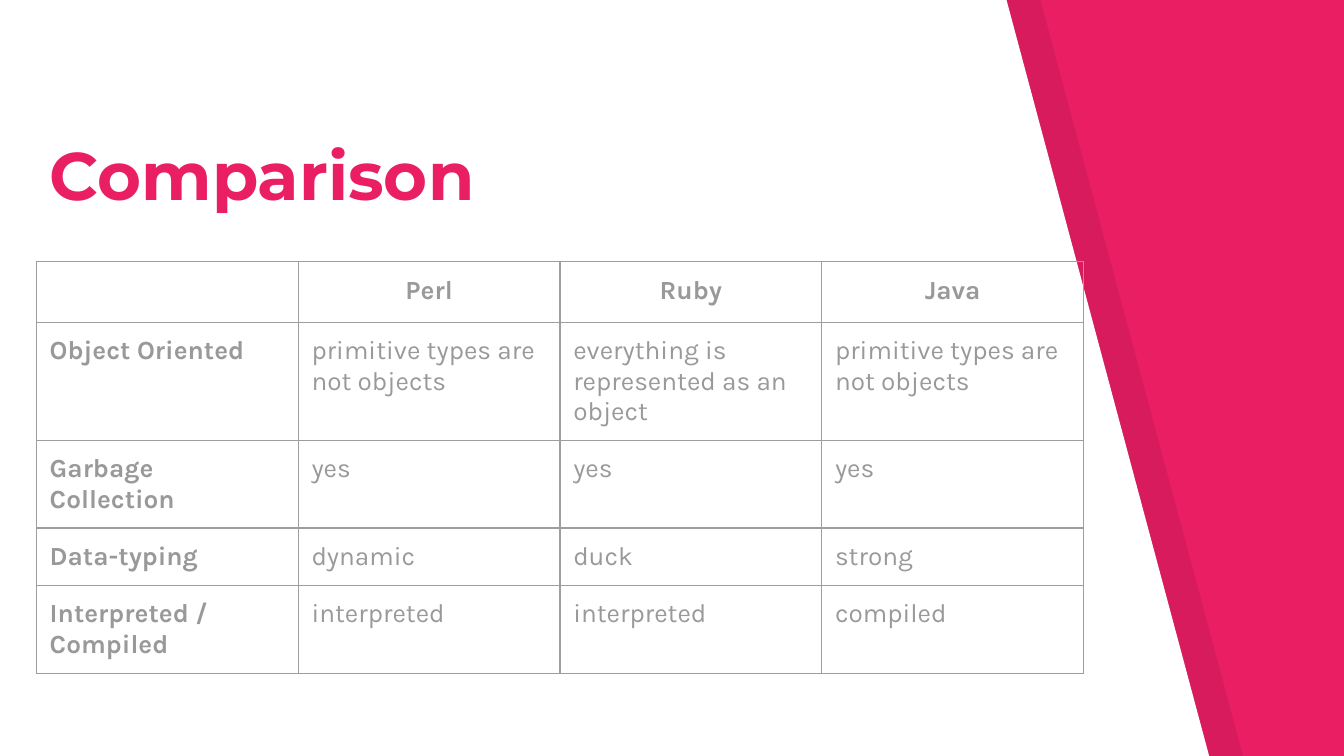
import pptx
import pptx.dml.color
import pptx.enum.text
import pptx.oxml
import pptx.oxml.ns
import pptx.util
from dataclasses import dataclass
from pptx.util import Cm


@dataclass(frozen=True)
class Theme:
    pink: str = "E91E63"
    white: str = "FFFFFF"
    shade: str = "000000"
    shade_opacity: int = 7
    text: str = "999999"
    border: str = "9E9E9E"
    border_width: float = 0.75
    title_font: str = "Montserrat"
    body_font: str = "Karla"
    title_size: int = 36
    body_size: int = 14


theme = Theme()
rgb = pptx.dml.color.RGBColor.from_string
inset = Cm(0.25)


def add_styled_run(paragraph, text, font_name, size, color, bold):
    run = paragraph.add_run()
    run.text = text
    run.font.name = font_name
    run.font.size = pptx.util.Pt(size)
    run.font.bold = bold
    run.font.color.rgb = rgb(color)


def add_cell_borders(cell):
    properties = cell._tc.get_or_add_tcPr()
    width = pptx.util.Pt(theme.border_width)
    for position, side in enumerate(("lnL", "lnR", "lnT", "lnB")):
        line = pptx.oxml.parse_xml(
            f'<a:{side} {pptx.oxml.ns.nsdecls("a")} w="{width}"><a:solidFill>'
            f'<a:srgbClr val="{theme.border}"/></a:solidFill></a:{side}>'
        )
        properties.insert(position, line)


presentation = pptx.Presentation()
presentation.slide_width = Cm(25.4)
presentation.slide_height = Cm(14.29)
slide = presentation.slides.add_slide(presentation.slide_layouts[5])
slide.background.fill.solid()
slide.background.fill.fore_color.rgb = rgb(theme.pink)

# Slanted white panel with its shade to the right
for offset, color in ((0.64, theme.shade), (0, theme.white)):
    builder = slide.shapes.build_freeform(Cm(offset), Cm(-0.03))
    corners = ((0, 14.32), (22.86, 14.32), (19.02, -0.01))
    builder.add_line_segments([(Cm(offset + x), Cm(y)) for x, y in corners])
    panel = builder.convert_to_shape()
    panel.shadow.inherit = False
    panel.line.fill.background()
    panel.fill.solid()
    panel.fill.fore_color.rgb = rgb(color)
    if color == theme.shade:
        color_element = panel.element.spPr.find(".//" + pptx.oxml.ns.qn("a:srgbClr"))
        color_element.append(pptx.oxml.parse_xml(
            f'<a:alpha {pptx.oxml.ns.nsdecls("a")} val="{theme.shade_opacity * 1000}"/>'
        ))

# Title, brought in front of the panels
title = slide.shapes.title
title.element.getparent().append(title.element)
title.left, title.top, title.width, title.height = Cm(0.69), Cm(2.59), Cm(18.67), Cm(1.7)
frame = title.text_frame
frame.margin_left = frame.margin_right = frame.margin_top = frame.margin_bottom = inset
frame.vertical_anchor = pptx.enum.text.MSO_ANCHOR.BOTTOM
frame.auto_size = pptx.enum.text.MSO_AUTO_SIZE.NONE
frame.word_wrap = True
paragraph = frame.paragraphs[0]
paragraph.alignment = pptx.enum.text.PP_ALIGN.LEFT
add_styled_run(paragraph, "Comparison", theme.title_font, theme.title_size, theme.pink, True)

# Comparison table
rows = (
    ("", "Perl", "Ruby", "Java"),
    ("Object Oriented", "primitive types are not objects",
     "everything is represented as an object", "primitive types are not objects"),
    ("Garbage Collection", "yes", "yes", "yes"),
    ("Data-typing", "dynamic", "duck", "strong"),
    ("Interpreted / Compiled", "interpreted", "interpreted", "compiled"),
)
table = slide.shapes.add_table(
    len(rows), len(rows[0]), Cm(0.69), Cm(4.95), Cm(19.79), Cm(5.51)
).table
table.first_row = False
table.horz_banding = False
for row_index, texts in enumerate(rows):
    is_header = row_index == 0
    table.rows[row_index].height = Cm(1.15 if is_header else 1.09)
    for column_index, text in enumerate(texts):
        cell = table.cell(row_index, column_index)
        cell.margin_left = cell.margin_right = cell.margin_top = cell.margin_bottom = inset
        cell.fill.background()
        add_cell_borders(cell)
        paragraph = cell.text_frame.paragraphs[0]
        if not text:
            paragraph._p.append(pptx.oxml.parse_xml(
                f'<a:endParaRPr {pptx.oxml.ns.nsdecls("a")} sz="{theme.body_size * 100}"/>'
            ))
            continue
        if is_header:
            paragraph.alignment = pptx.enum.text.PP_ALIGN.CENTER
        add_styled_run(paragraph, text, theme.body_font, theme.body_size, theme.text,
                       is_header or column_index == 0)

presentation.save("out.pptx")
